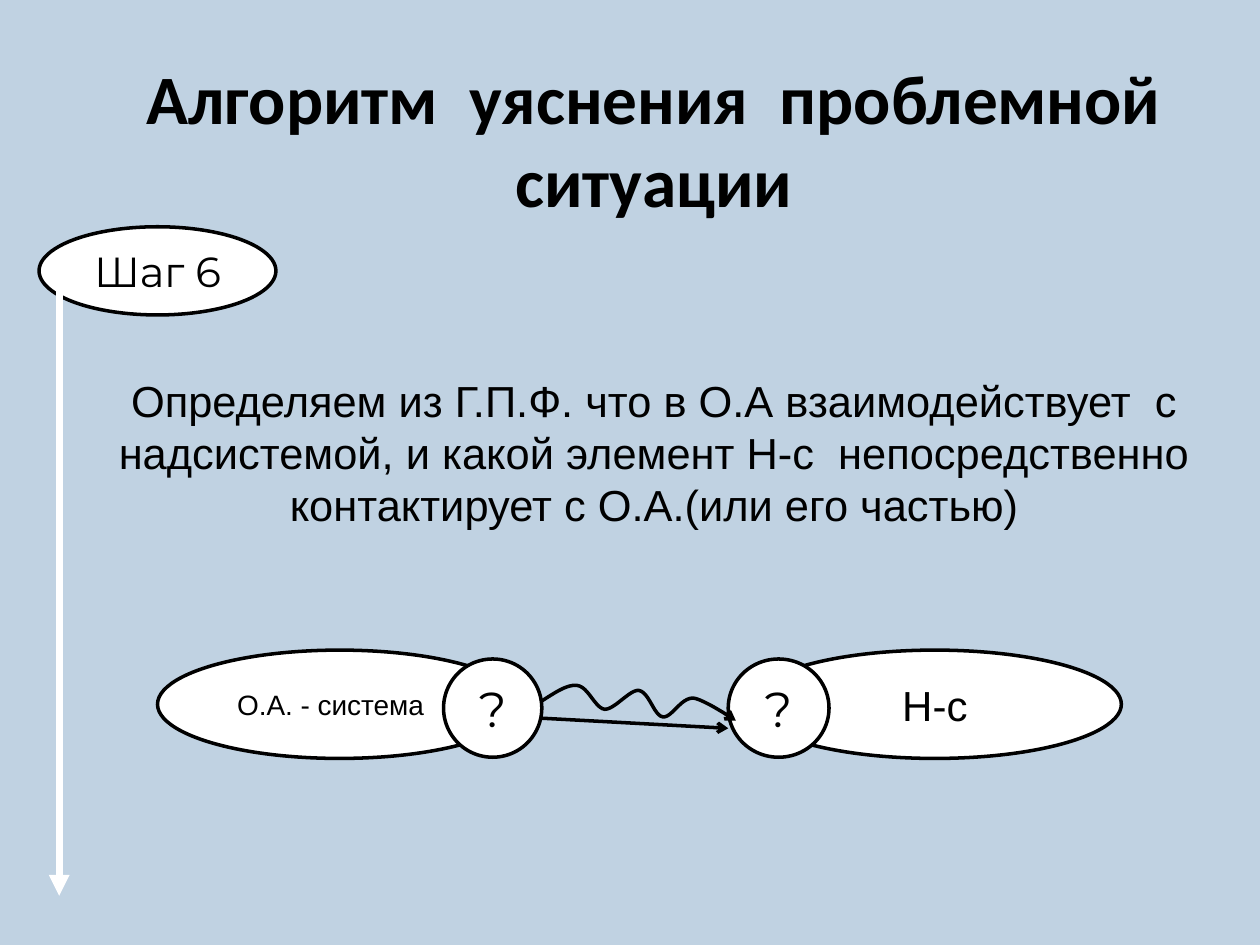
from lxml.etree import SubElement
from pptx import Presentation
from pptx.dml.color import RGBColor
from pptx.enum.shapes import MSO_CONNECTOR, MSO_SHAPE
from pptx.enum.text import MSO_ANCHOR, PP_ALIGN
from pptx.oxml.ns import qn
from pptx.util import Inches, Pt

BLACK = RGBColor(0x00, 0x00, 0x00)
WHITE = RGBColor(0xFF, 0xFF, 0xFF)
SKY = RGBColor(0xC0, 0xD2, 0xE2)

TITLE = "Алгоритм  уяснения  проблемной ситуации"
BODY = ("Определяем из Г.П.Ф. что в О.А взаимодействует  с надсистемой, "
        "и какой элемент Н-с  непосредственно контактирует с О.А.(или его частью)")

# text, box (left, top, width, height), size, font, right inset
ELLIPSES = [
    ("Шаг 6", (0.31, 1.8, 1.88, 0.7), 24, "Montserrat", 0.1),
    ("О.А. - система", (1.25, 5.16, 2.89, 0.86), 16, "Arial", 0.24),
    ("?", (3.52, 5.23, 0.78, 0.78), 28, "Montserrat", 0.1),
    ("Н-с", (5.94, 5.16, 2.96, 0.86), 24, "Arial", 0.1),
    ("?", (5.78, 5.23, 0.8, 0.78), 28, "Montserrat", 0.1),
]

# start, end, colour, width, arrowhead
ARROWS = [
    ((0.47, 2.27), (0.47, 7.11), WHITE, 4, "triangle"),
    ((4.3, 5.7), (5.78, 5.78), BLACK, 2, "arrow"),
]

# each Bezier piece: two control points and an end point
WAVE_START = (4.29, 5.57)
WAVE = [
    ((4.4, 5.5), (4.5, 5.43), (4.58, 5.44)),
    ((4.67, 5.45), (4.72, 5.62), (4.8, 5.63)),
    ((4.88, 5.63), (5, 5.47), (5.07, 5.48)),
    ((5.15, 5.49), (5.19, 5.68), (5.26, 5.69)),
    ((5.33, 5.7), (5.4, 5.54), (5.5, 5.54)),
    ((5.59, 5.55), (5.84, 5.72), (5.84, 5.72)),
]
STEPS = 12


def place(sp, box):
    sp.left, sp.top, sp.width, sp.height = map(Inches, box)


def write(sp, text, size, font, bold=False, anchor=MSO_ANCHOR.MIDDLE):
    tf = sp.text_frame
    tf.word_wrap = True
    tf.vertical_anchor = anchor
    p = tf.paragraphs[0]
    p.alignment = PP_ALIGN.CENTER
    r = p.add_run()
    r.text = text
    r.font.size, r.font.name, r.font.bold = Pt(size), font, bold
    r.font.color.rgb = BLACK
    return p


def outline(sp, color, width, head=None):
    sp.line.color.rgb = color
    sp.line.width = Pt(width)
    if head:
        SubElement(sp.line._get_or_add_ln(), qn("a:tailEnd"), type=head)


def bezier_points(start, pieces):
    points = []
    for c1, c2, end in pieces:
        for i in range(1, STEPS + 1):
            t = i / STEPS
            u = 1 - t
            points.append(tuple(
                u**3 * a + 3 * u * u * t * b + 3 * u * t * t * c + t**3 * d
                for a, b, c, d in zip(start, c1, c2, end)))
        start = end
    return points


prs = Presentation()
prs.slide_width, prs.slide_height = Inches(10), Inches(7.5)
s = prs.slides.add_slide(prs.slide_layouts[5])
s.background.fill.solid()
s.background.fill.fore_color.rgb = SKY

title = s.shapes.title
place(title, (0.62, 0.55, 9.14, 1.09))
write(title, TITLE, 39.6, "Calibri", bold=True)

body = s.shapes.add_textbox(*map(Inches, (0.78, 2.42, 8.83, 1.72)))
body.fill.solid()
body.fill.fore_color.rgb = SKY
body.text_frame.margin_top = Inches(0.55)
write(body, BODY, 24.8, "Arial", anchor=MSO_ANCHOR.TOP).line_spacing = Pt(29.7)

for text, box, size, font, inset in ELLIPSES:
    sp = s.shapes.add_shape(MSO_SHAPE.OVAL, *map(Inches, box))
    sp.shadow.inherit = False
    sp.fill.solid()
    sp.fill.fore_color.rgb = WHITE
    outline(sp, BLACK, 2)
    write(sp, text, size, font)
    sp.text_frame.margin_right = Inches(inset)

for start, end, color, width, head in ARROWS:
    line = s.shapes.add_connector(MSO_CONNECTOR.STRAIGHT, *map(Inches, start + end))
    outline(line, color, width, head)
    SubElement(line._element.spPr, qn("a:effectLst"))

builder = s.shapes.build_freeform(*WAVE_START, scale=Inches(1))
builder.add_line_segments(bezier_points(WAVE_START, WAVE), close=False)
# local units are inches, so scale up before the builder rounds them
builder = s.shapes.build_freeform(*map(Inches, WAVE_START))
builder.add_line_segments(
    [tuple(map(Inches, pt)) for pt in bezier_points(WAVE_START, WAVE)], close=False)
wave = builder.convert_to_shape()
wave.shadow.inherit = False
wave.fill.background()
outline(wave, BLACK, 2, "arrow")

prs.save("out.pptx")
